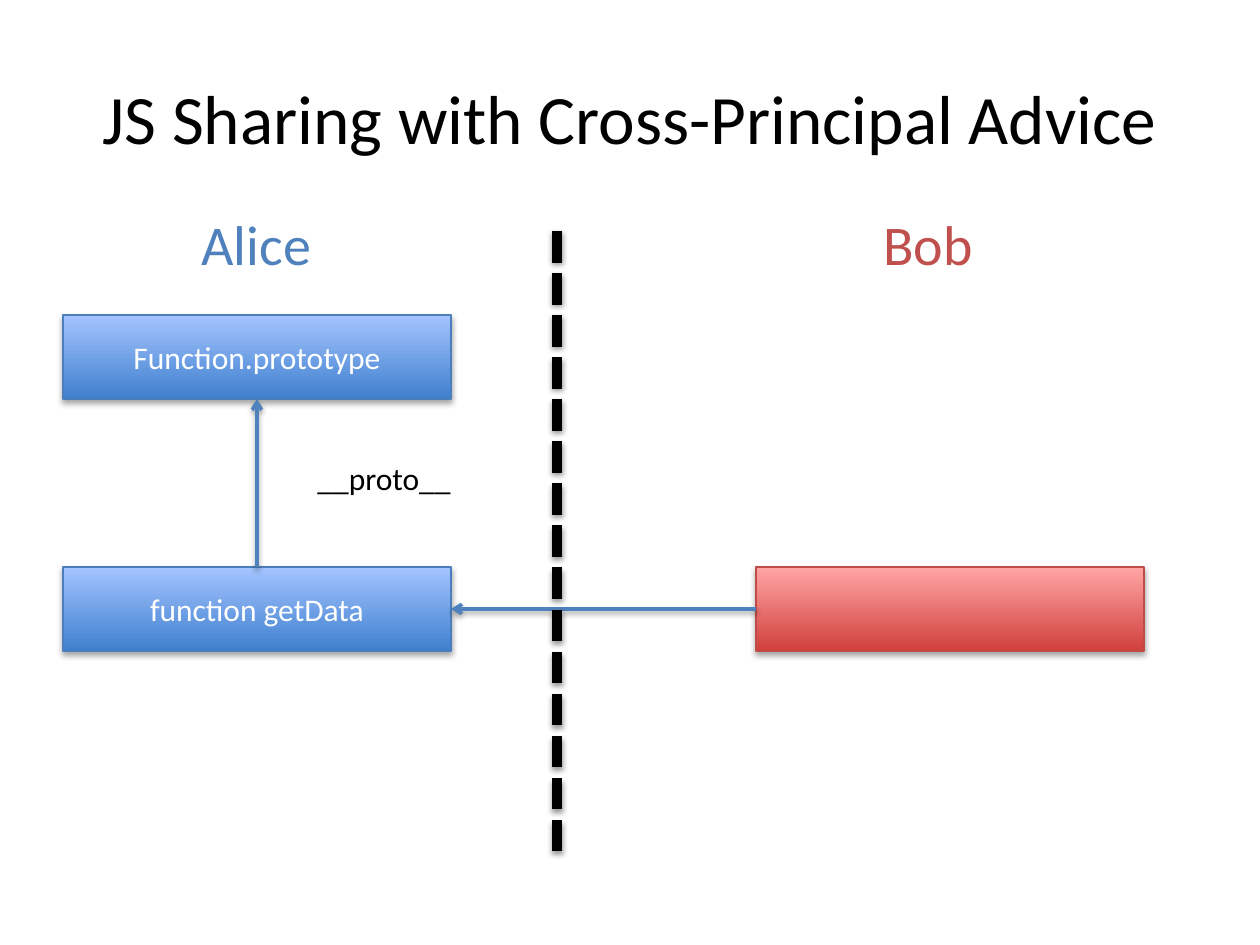
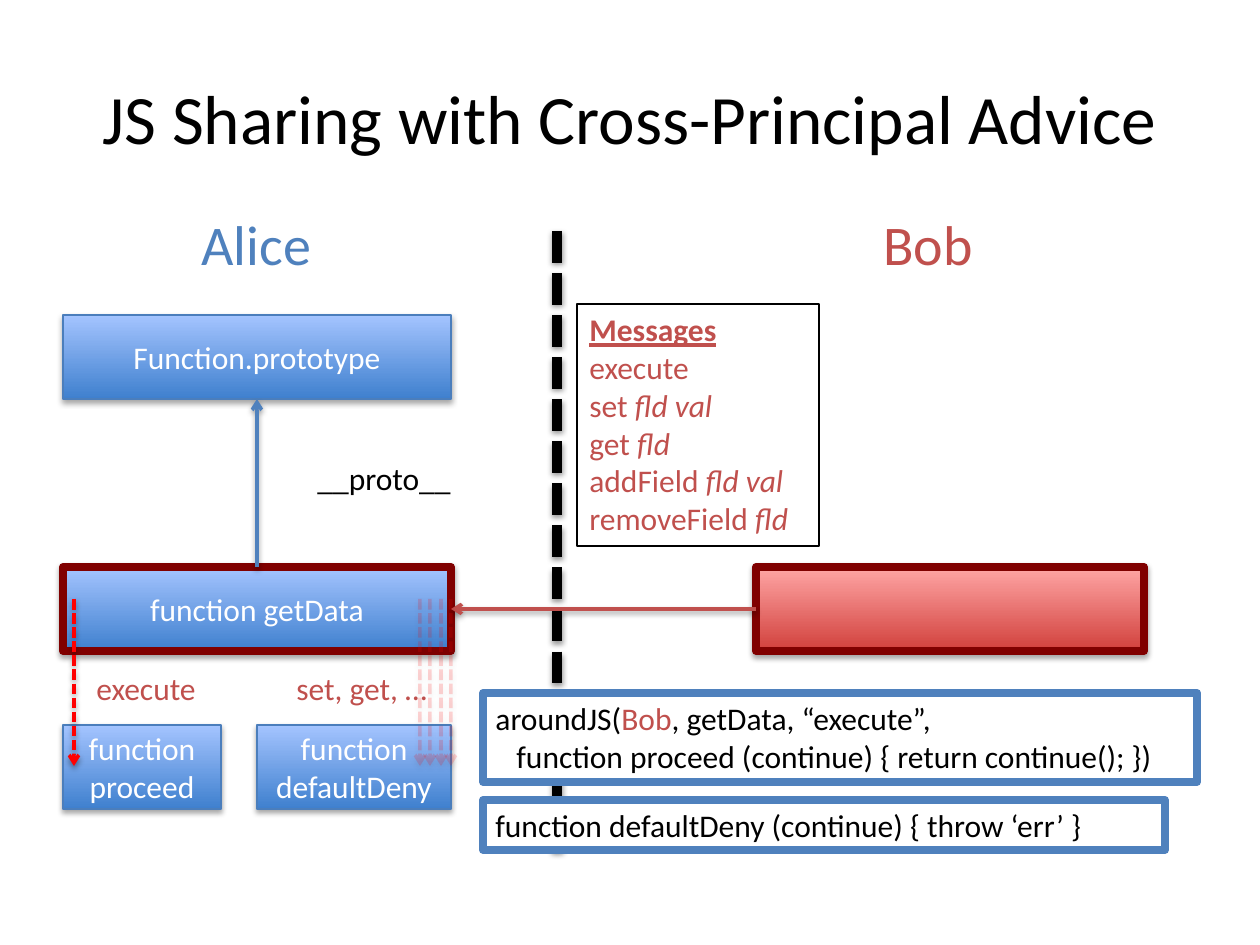
from dataclasses import dataclass

from pptx import Presentation
from pptx.dml.color import RGBColor
from pptx.enum.dml import MSO_LINE
from pptx.enum.shapes import MSO_CONNECTOR, MSO_SHAPE
from pptx.enum.text import MSO_ANCHOR, PP_ALIGN
from pptx.oxml import parse_xml
from pptx.oxml.ns import nsdecls, qn
from pptx.util import Emu, Pt

RECT, LINE = MSO_SHAPE.RECTANGLE, MSO_CONNECTOR.STRAIGHT
DASH = MSO_LINE.SQUARE_DOT
LEFT, CENTER = PP_ALIGN.LEFT, PP_ALIGN.CENTER
TOP, MIDDLE = MSO_ANCHOR.TOP, MSO_ANCHOR.MIDDLE
NORTH, WEST, SOUTH, EAST = range(4)


@dataclass(frozen=True)
class Theme:
    font: str = "Calibri"
    title: float = 39.6
    head: int = 32
    body: int = 18
    black: str = "000000"
    white: str = "FFFFFF"
    blue: str = "4F81BD"
    red: str = "C0504D"
    alert: str = "FF0000"
    guard: str = "800000"
    # Node looks: gradient from bottom to top, then outline
    alice: tuple = ("3F80CE", "A4C4FF", "4B7EBC")
    bob: tuple = ("D1403C", "FFA6A5", "BF4C48")
    thin: float = 0.75
    link: int = 2
    thick: float = 4.5
    wall: int = 6


T = Theme()
TITLE = "JS Sharing with Cross-Principal Advice"
NODE_W, NODE_H = 388, 84
ALICE = (63, 203)
BOB = (756, 203)


def px(n):
    return Emu(round(n * 914400 / 126))


def rgb(code):
    return RGBColor.from_string(code)


# Shared drawing helpers
def cast(shape, alpha, dist):
    """Add a soft shadow below a shape or a line."""
    shape._element.spPr.append(parse_xml(
        f'<a:effectLst {nsdecls("a")}><a:outerShdw blurRad="40000" '
        f'dist="{dist}" dir="5400000" rotWithShape="0"><a:srgbClr val="000000">'
        f'<a:alpha val="{alpha}000"/></a:srgbClr></a:outerShdw></a:effectLst>'))


def write(frame, rows, color=T.black, size=T.body, align=LEFT, anchor=TOP):
    """Fill a frame; a row is a string or a list of (text, marks)."""
    frame.vertical_anchor = anchor
    for i, row in enumerate(rows):
        para = frame.paragraphs[0] if i == 0 else frame.add_paragraph()
        para.alignment = align
        font = para.font
        font.name, font.size = T.font, Pt(size)
        font.color.rgb = rgb(color)
        for text, marks in [(row, {})] if isinstance(row, str) else row:
            run = para.add_run()
            run.text = text
            for key, value in marks.items():
                if key == "color":
                    run.font.color.rgb = rgb(value)
                else:
                    setattr(run.font, key, value)


def label(shapes, box, rows, **look):
    text = shapes.add_textbox(*map(px, box))
    text.text_frame.word_wrap = True
    write(text.text_frame, rows, **look)
    return text


def edge(shape, color, width):
    shape.line.color.rgb = rgb(color)
    shape.line.width = Pt(width)


def node(shapes, box, look, text="", guard=False):
    shape = shapes.add_shape(RECT, *map(px, box))
    low, high, rim = look
    shape.fill.gradient()
    shape.fill.gradient_angle = 90
    for stop, color in zip(shape.fill.gradient_stops, (low, high)):
        stop.color.rgb = rgb(color)
    edge(shape, T.guard if guard else rim, T.thick if guard else T.thin)
    cast(shape, 35, 23000)
    if text:
        write(shape.text_frame, [text], T.white, align=CENTER, anchor=MIDDLE)
    return shape


def line(shapes, ends, color, width=T.link, dash=False, head=True, alpha=100):
    conn = shapes.add_connector(LINE, *map(px, ends))
    edge(conn, color, width)
    if dash:
        conn.line.dash_style = DASH
    ln = conn._element.spPr.find(qn("a:ln"))
    if alpha < 100:
        ln.find(".//" + qn("a:srgbClr")).append(
            parse_xml(f'<a:alpha {nsdecls("a")} val="{alpha}000"/>'))
    if head:
        ln.append(parse_xml(f'<a:tailEnd {nsdecls("a")} type="arrow"/>'))
    cast(conn, 38, 20000)
    return conn


def join(shapes, start, side, end, goal, color):
    conn = line(shapes, (0, 0, 0, 0), color)
    conn.begin_connect(start, side)
    conn.end_connect(end, goal)


# Regions
def alice(shapes, at, guard):
    x, y = at
    data = node(shapes, (x, y + 364, NODE_W, NODE_H), T.alice,
                "function getData", guard)
    proto = node(shapes, (x, y + 112, NODE_W, NODE_H), T.alice,
                 "Function.prototype")
    join(shapes, data, NORTH, proto, SOUTH, T.blue)
    label(shapes, (x + 126, y, 147, 81), ["Alice"], color=T.blue, size=T.head)
    label(shapes, (x + 242, y + 250, 273, 50), ["__proto__"])
    return data


def bob(shapes, at, guard):
    x, y = at
    label(shapes, (x + 115, y, 147, 81), ["Bob"], color=T.red, size=T.head)
    return node(shapes, (x, y + 364, NODE_W, NODE_H), T.bob, guard=guard)


def wall(shapes):
    line(shapes, (557, 231, 557, 851), T.black, T.wall, dash=True, head=False)


def branch(shapes, box, name, text, lead, lanes, alpha=100):
    """Advice function with its message label and dashed arrows."""
    x, y, w, h = box
    parts = shapes.add_group_shape().shapes
    node(parts, box, T.alice, name)
    label(parts, (x + lead, y - 62, w - 18, 50), [text], color=T.red)
    for lane in lanes:
        line(parts, (x + lane, y - 126, x + lane, y + 41), T.alert,
             dash=True, alpha=alpha)


def menu(shapes, box):
    slant = {"italic": True}
    rows = [[("Messages", {"bold": True, "underline": True})], "execute"]
    rows += [[(verb + " ", {}), (args, slant)] for verb, args in (
        ("set", "fld val"), ("get", "fld"),
        ("addField", "fld val"), ("removeField", "fld"))]
    edge(label(shapes, box, rows, color=T.red), T.black, T.thin)


def code(shapes, box, rows):
    panel = label(shapes, box, rows)
    panel.fill.solid()
    panel.fill.fore_color.rgb = rgb(T.white)
    edge(panel, T.blue, T.thick)
    for para in panel.text_frame.paragraphs[1:]:
        para._p.get_or_add_pPr().set("marL", str(px(21)))


# Slides
def start(deck):
    slide = deck.slides.add_slide(deck.slide_layouts[5])
    title = slide.shapes.title
    title.left, title.top, title.width, title.height = map(
        px, (63, 38, 1134, 157))
    write(title.text_frame, [TITLE], size=T.title, align=CENTER, anchor=MIDDLE)
    return slide.shapes


def share(deck):
    shapes = start(deck)
    data = alice(shapes, ALICE, False)
    peer = bob(shapes, BOB, False)
    join(shapes, peer, WEST, data, EAST, T.blue)
    wall(shapes)


def advise(deck):
    shapes = start(deck)
    data = alice(shapes, ALICE, True)
    peer = bob(shapes, BOB, True)
    wall(shapes)
    join(shapes, peer, WEST, data, EAST, T.red)
    menu(shapes, (577, 304, 242, 242))
    branch(shapes, (63, 725, 158, NODE_H), "function proceed", "execute",
           21, [11])
    branch(shapes, (257, 725, 194, NODE_H), "function defaultDeny",
           "set, get, …", 27, [163 + 21 * i // 2 for i in range(4)], 16)
    code(shapes, (483, 693, 714, 89), [
        [("aroundJS(", {}), ("Bob", {"color": T.red}),
         (", getData, “execute”,", {})],
        "function proceed (continue) { return continue(); })"])
    code(shapes, (483, 800, 682, 50),
         ["function defaultDeny (continue) { throw ‘err’ }"])


def main():
    deck = Presentation()
    deck.slide_width, deck.slide_height = px(1260), px(945)
    share(deck)
    advise(deck)
    deck.save("out.pptx")


if __name__ == "__main__":
    main()
